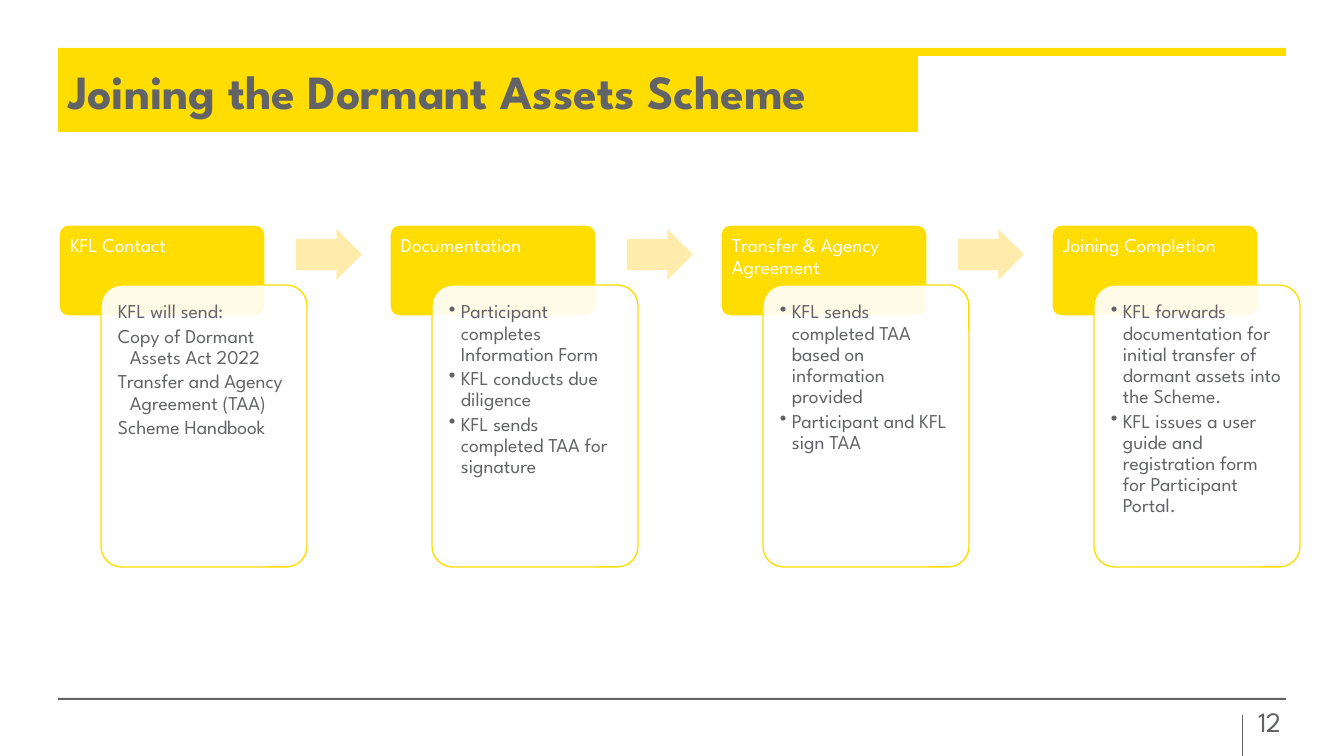
from lxml.etree import SubElement
from pptx import Presentation
from pptx.dml.color import RGBColor
from pptx.enum.shapes import MSO_CONNECTOR, MSO_SHAPE
from pptx.enum.text import MSO_ANCHOR, PP_ALIGN
from pptx.oxml.ns import qn
from pptx.util import Pt

EMU_PER_PX = 914400 / 100.8
FONT = "League Spartan"
YELLOW = RGBColor(0xFF, 0xDD, 0x00)
PALE_YELLOW = RGBColor(0xFF, 0xEB, 0xAB)
GREY = RGBColor(0x62, 0x63, 0x66)
WHITE = RGBColor(0xFF, 0xFF, 0xFF)

STEP_LEFT, STEP_PITCH = 59, 331
# Heading, whether its details are bulleted, details
STEPS = [
    ("KFL Contact", False, [
        "KFL will send:",
        "Copy of Dormant Assets Act 2022",
        "Transfer and Agency Agreement (TAA)",
        "Scheme Handbook",
    ]),
    ("Documentation", True, [
        "Participant completes Information Form",
        "KFL conducts due diligence",
        "KFL sends completed TAA for signature",
    ]),
    ("Transfer & Agency Agreement", True, [
        "KFL sends completed TAA based on information provided",
        "Participant and KFL sign TAA",
    ]),
    ("Joining Completion", True, [
        "KFL forwards documentation for initial transfer of dormant assets into the Scheme.",
        "KFL issues a user guide and registration form for Participant Portal.",
    ]),
]


def px(n):
    return round(n * EMU_PER_PX)


def add_box(s, kind, box, fill, line=None, adjustments=()):
    sp = s.shapes.add_shape(kind, *map(px, box))
    sp.shadow.inherit = False
    sp.fill.solid()
    sp.fill.fore_color.rgb = fill
    if line is None:
        sp.line.fill.background()
    else:
        sp.line.color.rgb = line
        sp.line.width = Pt(1)
    for i, value in enumerate(adjustments):
        sp.adjustments[i] = value
    return sp


def set_opacity(sp, percent):
    color = sp.fill._xPr.find(qn("a:solidFill"))[0]
    SubElement(color, qn("a:alpha"), val=str(percent * 1000))


def write(sp, lines, size, color, insets, space_after=0, bold=False,
          anchor=MSO_ANCHOR.TOP, align=PP_ALIGN.LEFT, spacing=0.9):
    """Fill a shape with one paragraph per line; insets are left, top, right, bottom."""
    tf = sp.text_frame
    tf.word_wrap = True
    tf.vertical_anchor = anchor
    tf.margin_left, tf.margin_top, tf.margin_right, tf.margin_bottom = map(px, insets)
    tf.text = "\n".join(lines)
    for p in tf.paragraphs:
        p.alignment = align
        p.line_spacing = spacing
        p.space_after = Pt(space_after)
        font = p.runs[0].font
        font.name, font.size, font.bold = FONT, Pt(size), bold
        font.color.rgb = color
    return tf


def add_text(s, box, *args, **kwargs):
    return write(s.shapes.add_textbox(*map(px, box)), *args, **kwargs)


def hang(p, bulleted):
    """Give a paragraph a hanging indent, with or without a bullet."""
    pPr = p._p.get_or_add_pPr()
    pPr.set("marL", str(px(12)))
    pPr.set("indent", str(-px(12)))
    if bulleted:
        SubElement(pPr, qn("a:buChar"), char="•")
    else:
        SubElement(pPr, qn("a:buNone"))


def add_line(s, x1, y1, x2, y2):
    line = s.shapes.add_connector(MSO_CONNECTOR.STRAIGHT, *map(px, (x1, y1, x2, y2)))
    line.line.color.rgb = GREY
    line.line.width = Pt(0.5)
    SubElement(line._element.spPr, qn("a:effectLst"))


def add_frame(s):
    add_line(s, 1242, 715, 1242, 756)
    add_box(s, MSO_SHAPE.RECTANGLE, (58, 48, 1228, 8), YELLOW)
    add_box(s, MSO_SHAPE.RECTANGLE, (58, 698, 1228, 2), GREY)
    tf = add_text(s, (1240, 701, 59, 40), ["12"], 20, GREY, (10, 5, 10, 5),
                  anchor=MSO_ANCHOR.MIDDLE, align=PP_ALIGN.CENTER, spacing=1.0)
    tf.paragraphs[0].runs[0].font._element.set("spc", "-50")
    title = add_box(s, MSO_SHAPE.RECTANGLE, (58, 56, 860, 76), YELLOW)
    write(title, ["Joining the Dormant Assets Scheme"], 34, GREY, (10, 12, 20, 12),
          bold=True, anchor=MSO_ANCHOR.MIDDLE)


def add_step(s, x, heading, bulleted, details):
    add_box(s, MSO_SHAPE.ROUNDED_RECTANGLE, (x, 225, 206, 91), YELLOW, WHITE, [0.1])
    add_text(s, (x, 225, 206, 61), [heading], 14, WHITE, (11, 11, 11, 6), space_after=5)
    card = add_box(s, MSO_SHAPE.ROUNDED_RECTANGLE, (x + 42, 285, 206, 282),
                   WHITE, YELLOW, [0.1])
    set_opacity(card, 90)
    tf = add_text(s, (x + 48, 291, 194, 270), details, 14, GREY, (11, 11, 11, 11),
                  space_after=2.3)
    for p in tf.paragraphs:
        hang(p, bulleted)


def main():
    prs = Presentation()
    prs.slide_width, prs.slide_height = px(1344), px(756)
    s = prs.slides.add_slide(prs.slide_layouts[6])
    add_frame(s)
    for i, step in enumerate(STEPS):
        x = STEP_LEFT + i * STEP_PITCH
        add_step(s, x, *step)
        if i < len(STEPS) - 1:
            add_box(s, MSO_SHAPE.RIGHT_ARROW, (x + 237, 229, 66, 51), PALE_YELLOW,
                    adjustments=[0.6, 0.5])
    prs.save("out.pptx")


if __name__ == "__main__":
    main()
